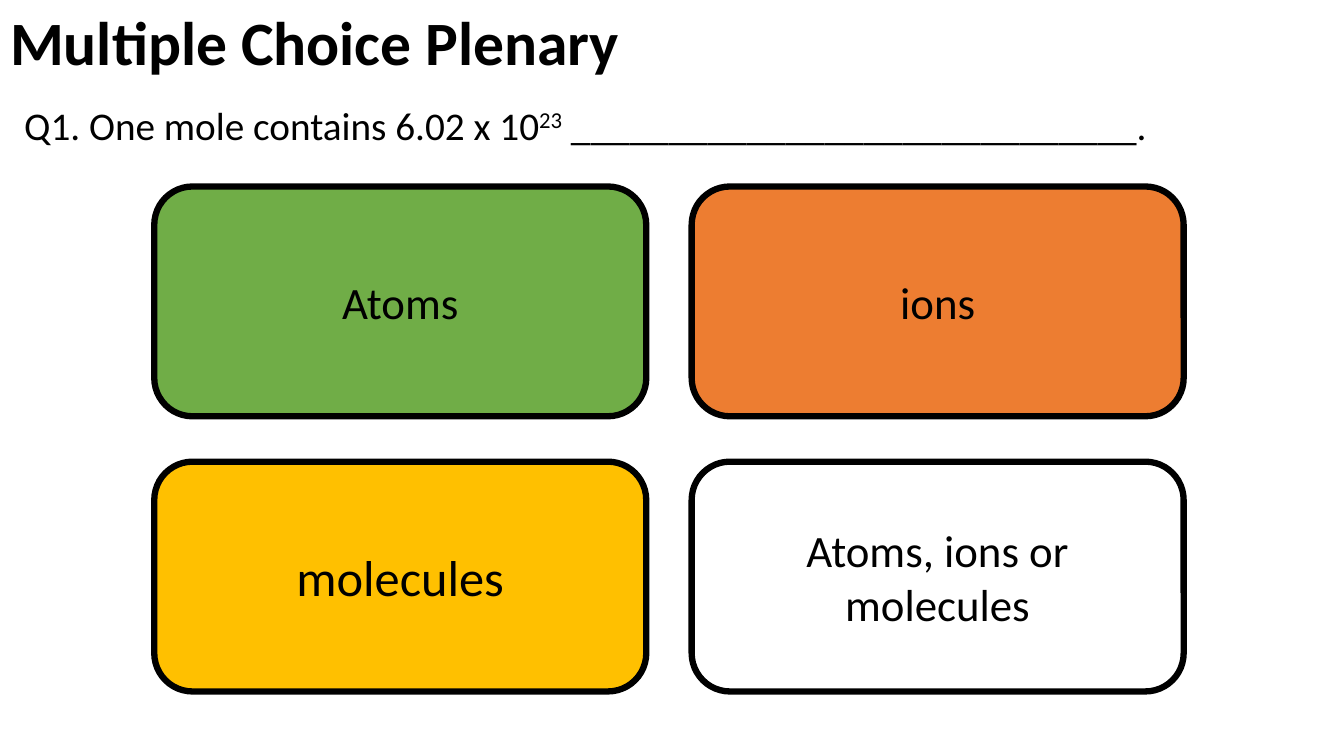
"""Build a multiple choice plenary slide with four answer cards."""
from lxml.etree import SubElement
from pptx import Presentation
from pptx.dml.color import RGBColor
from pptx.enum.shapes import MSO_SHAPE
from pptx.enum.text import MSO_ANCHOR, PP_ALIGN
from pptx.oxml.ns import qn
from pptx.util import Inches, Pt

HEADING = "Multiple Choice Plenary"
QUESTION = [
    ("Q1. One mole contains 6.02 x 10", 0),
    ("23", 30000),
    (" " + "_" * 29 + ".", 0),
]
ANSWERS = [
    ("Atoms", "green", "answer"),
    ("ions", "orange", "answer"),
    ("molecules", "yellow", "large_answer"),
    ("Atoms, ions or molecules", "white", "answer"),
]

THEME = {
    "colours": {"ink": "000000", "green": "70AD47", "orange": "ED7D31",
                "yellow": "FFC000", "white": "FFFFFF"},
    "sizes": {"heading": 44, "question": 28, "answer": 32, "large_answer": 36},
    "font": "Calibri",
    "outline": 4.5,
}

SLIDE_WIDTH, SLIDE_HEIGHT = 13.33, 7.5
HEADING_BOX = (0, 0, SLIDE_WIDTH, SLIDE_HEIGHT * 0.12)
QUESTION_BOX = (0.14, 1.01, 13, 5.75)
COLUMNS = 2
GRID_LEFT, GRID_TOP = 1.53, 1.85
CARD_WIDTH, CARD_HEIGHT = 4.88, 2.28
GUTTER = 0.45


def apply_format(target, values):
    for attribute, value in values.items():
        setattr(target, attribute, value)


def place(part, box):
    apply_format(part, dict(zip(("left", "top", "width", "height"), map(Inches, box))))


def colour(name):
    return RGBColor.from_string(THEME["colours"][name])


def add_words(paragraph, words, role, bold=False):
    run = paragraph.add_run()
    run.text = words
    apply_format(run.font, {"name": THEME["font"], "size": Pt(THEME["sizes"][role]),
                            "bold": bold})
    run.font.color.rgb = colour("ink")
    return run


def add_heading(slide):
    heading = slide.shapes.title
    place(heading, HEADING_BOX)
    apply_format(heading.text_frame, {"vertical_anchor": MSO_ANCHOR.MIDDLE, "word_wrap": True})
    paragraph = heading.text_frame.paragraphs[0]
    apply_format(paragraph, {"alignment": PP_ALIGN.LEFT, "line_spacing": 0.9})
    add_words(paragraph, HEADING, "heading", bold=True)


def add_question(slide):
    question = slide.placeholders[1]
    place(question, QUESTION_BOX)
    paragraph = question.text_frame.paragraphs[0]
    apply_format(paragraph, {"line_spacing": 0.9, "space_before": Pt(10)})
    properties = paragraph._p.get_or_add_pPr()
    for margin in ("marL", "indent"):
        properties.set(margin, "0")
    SubElement(properties, qn("a:buNone"))
    for words, baseline in QUESTION:
        run = add_words(paragraph, words, "question")
        if baseline:
            run._r.get_or_add_rPr().set("baseline", str(baseline))


def add_answers(slide):
    for index, (words, fill, role) in enumerate(ANSWERS):
        row, column = divmod(index, COLUMNS)
        left = GRID_LEFT + column * (CARD_WIDTH + GUTTER)
        top = GRID_TOP + row * (CARD_HEIGHT + GUTTER)
        box = map(Inches, (left, top, CARD_WIDTH, CARD_HEIGHT))
        card = slide.shapes.add_shape(MSO_SHAPE.ROUNDED_RECTANGLE, *box)
        card.shadow.inherit = False
        card.fill.solid()
        card.fill.fore_color.rgb = colour(fill)
        card.line.color.rgb = colour("ink")
        card.line.width = Pt(THEME["outline"])
        apply_format(card.text_frame, {"vertical_anchor": MSO_ANCHOR.MIDDLE, "word_wrap": True})
        paragraph = card.text_frame.paragraphs[0]
        paragraph.alignment = PP_ALIGN.CENTER
        add_words(paragraph, words, role)


def main():
    deck = Presentation()
    apply_format(deck, {"slide_width": Inches(SLIDE_WIDTH),
                        "slide_height": Inches(SLIDE_HEIGHT)})
    slide = deck.slides.add_slide(deck.slide_layouts[1])
    add_heading(slide)
    add_question(slide)
    add_answers(slide)
    deck.save("out.pptx")


if __name__ == "__main__":
    main()
